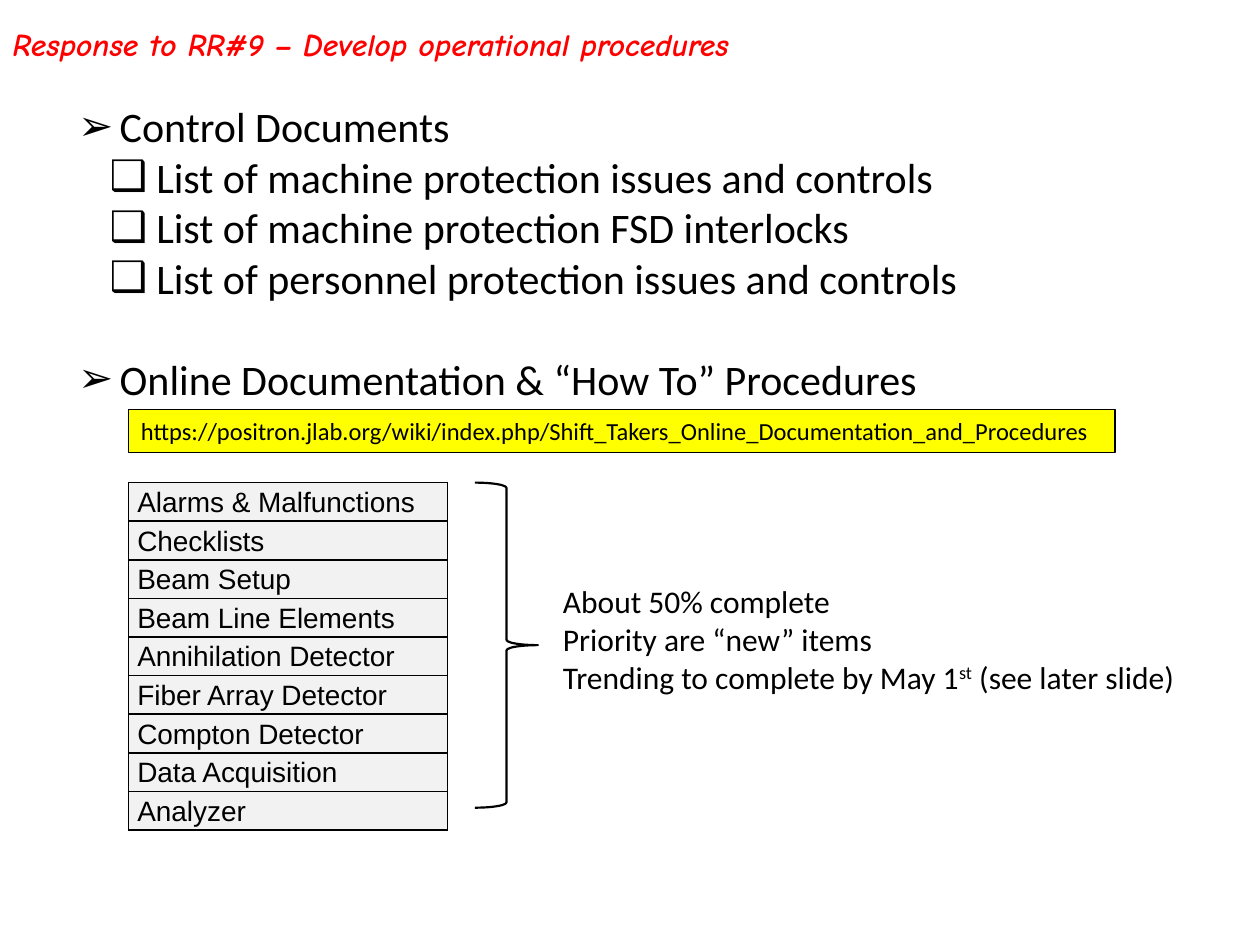
from lxml import etree
from pptx import Presentation
from pptx.dml.color import RGBColor
from pptx.enum.shapes import MSO_SHAPE
from pptx.enum.text import MSO_ANCHOR, MSO_AUTO_SIZE, PP_ALIGN
from pptx.oxml.ns import qn
from pptx.util import Inches, Pt

RECTANGLE, BRACE = MSO_SHAPE.RECTANGLE, MSO_SHAPE.RIGHT_BRACE
TOP, MIDDLE = MSO_ANCHOR.TOP, MSO_ANCHOR.MIDDLE
LEFT, NO_FIT = PP_ALIGN.LEFT, MSO_AUTO_SIZE.NONE
WIDTH, HEIGHT = Inches(10), Inches(7.5)
COLORS = {"heading": "FF0000", "ink": "000000", "link": "FFFF00", "cell": "F2F2F2"}

BULLETS = {0: ("➢", 0.33, 0.33), 1: ("❑", 0.62, 0.37)}
OUTLINE = [
    (0, "Control Documents", 0),
    (1, "List of machine protection issues and controls", 0),
    (1, "List of machine protection FSD interlocks", 0),
    (1, "List of personnel protection issues and controls", 0),
    (0, "Online Documentation & “How To” Procedures", 29),
]
WIKI = "https://positron.jlab.org/wiki/index.php/Shift_Takers_Online_Documentation_and_Procedures"
PROCEDURES = [
    "Alarms & Malfunctions", "Checklists", "Beam Setup", "Beam Line Elements",
    "Annihilation Detector", "Fiber Array Detector", "Compton Detector",
    "Data Acquisition", "Analyzer",
]
STATUS = [
    ["About 50% complete"],
    ["Priority are “new” items"],
    ["Trending to complete by May 1", "st", " (see later slide)"],
]


def rgb(name):
    """Look up a named colour."""
    return RGBColor.from_string(COLORS[name])


def area(left, top, width, height):
    """Turn percentages of the slide into a left, top, width, height tuple."""
    return (int(WIDTH * left / 100), int(HEIGHT * top / 100),
            int(WIDTH * width / 100), int(HEIGHT * height / 100))


def place(placeholder, box):
    """Move a placeholder and let its text start at the top left."""
    placeholder.left, placeholder.top, placeholder.width, placeholder.height = box
    frame = placeholder.text_frame
    frame.auto_size, frame.vertical_anchor = NO_FIT, TOP
    return frame


def style(font, size, face="Calibri", color="ink"):
    """Set size, typeface and colour."""
    font.size, font.name = Pt(size), face
    font.color.rgb = rgb(color)


def add_heading(slide, text):
    """Fill the title placeholder."""
    frame = place(slide.shapes.title, area(0, 0, 86.7, 6.8))
    frame.text = text
    paragraph = frame.paragraphs[0]
    paragraph.alignment, paragraph.line_spacing = LEFT, 1.5
    font = paragraph.runs[0].font
    style(font, 18, "Comic Neue", "heading")
    font.bold = font.italic = True


def add_outline(slide, items):
    """Fill the body placeholder with the two-level list."""
    frame = place(slide.placeholders[1], area(5.2, 10, 75, 55.2))
    frame.text = "\n".join(text for _, text, _ in items)
    for paragraph, (level, _, gap) in zip(frame.paragraphs, items):
        symbol, margin, hanging = BULLETS[level]
        paragraph.level, paragraph.space_before = level, Pt(gap)
        properties = paragraph._p.get_or_add_pPr()
        properties.set("marL", str(Inches(margin)))
        properties.set("indent", str(-Inches(hanging)))
        etree.SubElement(properties, qn("a:buChar"), char=symbol)
        style(paragraph.runs[0].font, 24)


def add_outlined(slide, kind, box, weight):
    """Add a black-outlined shape without shadow."""
    outlined = slide.shapes.add_shape(kind, *box)
    outlined.shadow.inherit = False
    outlined.line.color.rgb, outlined.line.width = rgb("ink"), Pt(weight)
    return outlined


def add_link_bar(slide, address):
    """Add the highlighted web address."""
    bar = add_outlined(slide, RECTANGLE, area(10.2, 43.33, 78.3, 4.53), 0.75)
    bar.fill.solid()
    bar.fill.fore_color.rgb = rgb("link")
    frame = bar.text_frame
    frame.text, frame.vertical_anchor = address, MIDDLE
    frame.paragraphs[0].alignment = LEFT
    style(frame.paragraphs[0].runs[0].font, 14)


def add_borders(cell):
    """Draw a one-point line on each side of a cell."""
    properties = cell._tc.get_or_add_tcPr()
    for side in ("lnL", "lnR", "lnT", "lnB"):
        border = etree.SubElement(properties, qn(f"a:{side}"), w=str(Pt(1)))
        fill = etree.SubElement(border, qn("a:solidFill"))
        etree.SubElement(fill, qn("a:srgbClr"), val=COLORS["ink"])


def add_procedure_table(slide, names):
    """List the procedures in a one-column table with equal rows."""
    box = area(10.2, 51.07, 25.3, 36.8)
    table = slide.shapes.add_table(len(names), 1, *box).table
    table.first_row = table.horz_banding = False
    for row, name in zip(table.rows, names):
        row.height = box[3] // len(names)
        cell = row.cells[0]
        add_borders(cell)
        cell.fill.solid()
        cell.fill.fore_color.rgb = rgb("cell")
        cell.margin_left = cell.margin_right = Inches(0.07)
        cell.margin_top = cell.margin_bottom = 0
        cell.text = name
        paragraph = cell.text_frame.paragraphs[0]
        paragraph.line_spacing = 1.15
        style(paragraph.runs[0].font, 16, "Arial")


def add_status(slide, lines):
    """Add the progress note, raising the ordinal suffix."""
    frame = slide.shapes.add_textbox(*area(43.7, 60.93, 51.3, 13.47)).text_frame
    frame.word_wrap = False
    for index, pieces in enumerate(lines):
        paragraph = frame.add_paragraph() if index else frame.paragraphs[0]
        for piece in pieces:
            run = paragraph.add_run()
            run.text = piece
            style(run.font, 18)
            if piece == "st":
                run._r.get_or_add_rPr().set("baseline", "30000")


def main():
    """Build and save the slide."""
    deck = Presentation()
    deck.slide_width, deck.slide_height = WIDTH, HEIGHT
    slide = deck.slides.add_slide(deck.slide_layouts[1])
    add_heading(slide, "Response to RR#9 – Develop operational procedures")
    add_outline(slide, OUTLINE)
    add_link_bar(slide, WIKI)
    add_procedure_table(slide, PROCEDURES)
    brace = add_outlined(slide, BRACE, area(37.7, 51.07, 5, 34.4), 1.25)
    brace.fill.background()
    add_status(slide, STATUS)
    deck.save("out.pptx")


if __name__ == "__main__":
    main()
